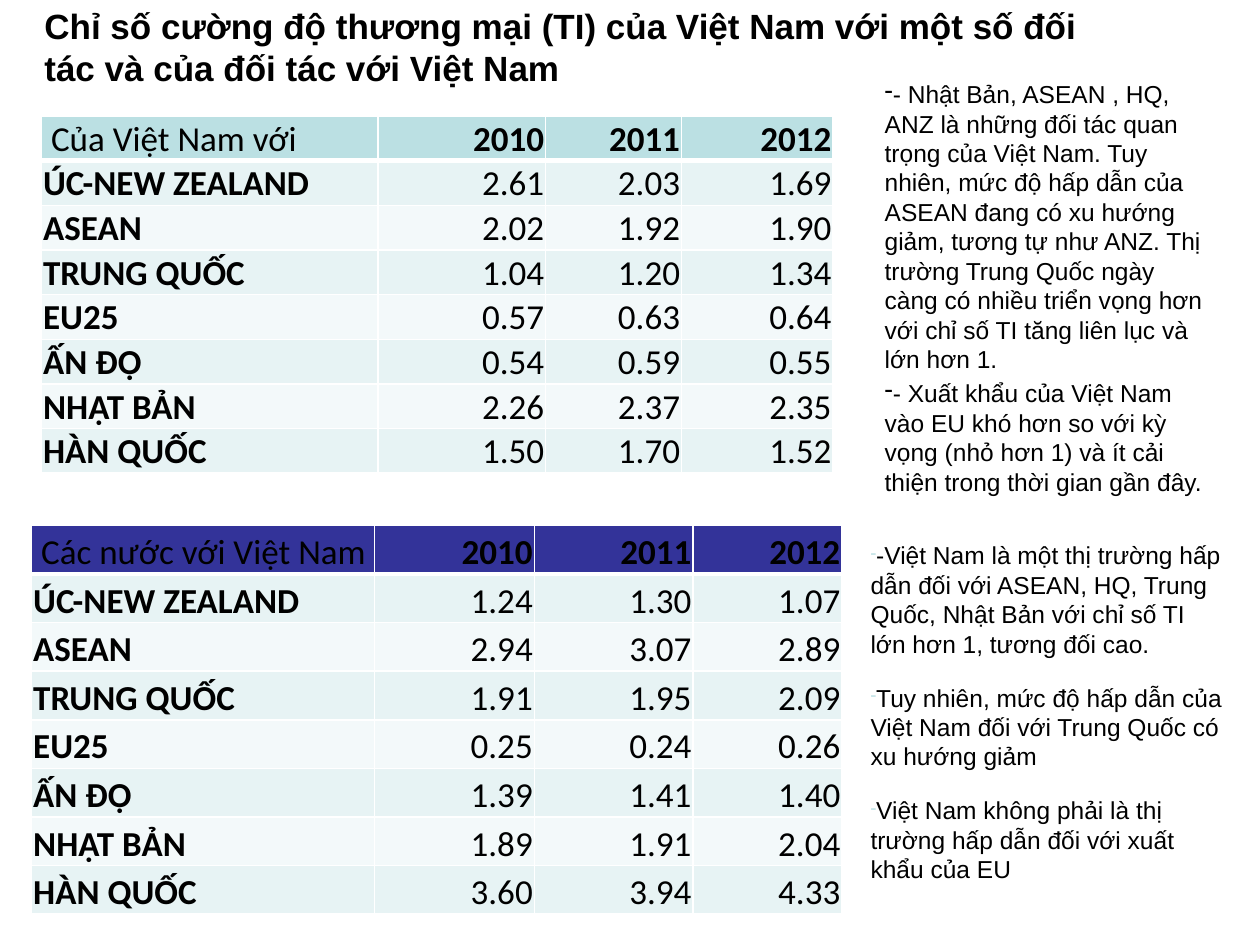
from lxml.etree import SubElement
from pptx import Presentation
from pptx.dml.color import RGBColor
from pptx.enum.text import MSO_ANCHOR, MSO_AUTO_SIZE, PP_ALIGN
from pptx.oxml.ns import qn
from pptx.util import Cm, Pt

TITLE = "Chỉ số cường độ thương mại (TI) của Việt Nam với một số đối tác và của đối tác với Việt Nam"
EXPORT_NOTES = [
    "- Nhật Bản, ASEAN , HQ, ANZ là những đối tác quan trọng của Việt Nam. "
    "Tuy nhiên, mức độ hấp dẫn của ASEAN đang có xu hướng giảm, tương tự như ANZ. "
    "Thị trường Trung Quốc ngày càng có nhiều triển vọng hơn với chỉ số TI "
    "tăng liên lục và lớn hơn 1.",
    "- Xuất khẩu của Việt Nam vào EU khó hơn so với kỳ vọng (nhỏ hơn 1) "
    "và ít cải thiện trong thời gian gần đây.",
]
IMPORT_NOTES = [
    "-Việt Nam là một thị trường hấp dẫn đối với ASEAN, HQ, Trung Quốc, "
    "Nhật Bản với chỉ số TI lớn hơn 1, tương đối cao.",
    "Tuy nhiên, mức độ hấp dẫn của Việt Nam đối với Trung Quốc có xu hướng giảm",
    "Việt Nam không phải là thị trường hấp dẫn đối với xuất khẩu của EU",
]
YEARS = ["2010", "2011", "2012"]
PARTNERS = ["ÚC-NEW ZEALAND", "ASEAN", "TRUNG QUỐC", "EU25", "ẤN ĐỘ", "NHẬT BẢN", "HÀN QUỐC"]
VIETNAM_TI = ["2.61 2.03 1.69", "2.02 1.92 1.90", "1.04 1.20 1.34", "0.57 0.63 0.64",
              "0.54 0.59 0.55", "2.26 2.37 2.35", "1.50 1.70 1.52"]
PARTNER_TI = ["1.24 1.30 1.07", "2.94 3.07 2.89", "1.91 1.95 2.09", "0.25 0.24 0.26",
              "1.39 1.41 1.40", "1.89 1.91 2.04", "3.60 3.94 4.33"]
BANDS = ["F3F9FA", "E7F3F4"]

TITLE_FONT = {"name": "Arial", "size": Pt(20), "bold": True}
NOTE_FONT = {"name": "Arial", "size": Pt(14), "bold": False}
CELL_FORMAT = {"vertical_anchor": MSO_ANCHOR.BOTTOM, "margin_left": Cm(0.03),
               "margin_right": Cm(0.03), "margin_top": Cm(0.03), "margin_bottom": 0}


def color(hex_value):
    return RGBColor.from_string(hex_value)


def apply(obj, values):
    for name, value in values.items():
        setattr(obj, name, value)


def place(sp, left, top, width, height):
    apply(sp, {"left": Cm(left), "top": Cm(top), "width": Cm(width), "height": Cm(height)})


def write(p, text, font):
    r = p.add_run()
    r.text = text
    apply(r.font, font)
    r.font.color.rgb = color("000000")


def add_dash(p, bullet_color=None, percent=None):
    pPr = p._p.get_or_add_pPr()
    pPr.set("marL", "0")
    pPr.set("indent", "0")
    if bullet_color:
        SubElement(SubElement(pPr, qn("a:buClr")), qn("a:srgbClr"), val=bullet_color)
    if percent:
        SubElement(pPr, qn("a:buSzPct"), val=str(percent * 1000))
    SubElement(pPr, qn("a:buFontTx"))
    SubElement(pPr, qn("a:buChar"), char="-")


def fill_notes(sp, notes, spacing, **bullet):
    tf = sp.text_frame
    apply(tf, {"word_wrap": True, "auto_size": MSO_AUTO_SIZE.NONE})
    for i, text in enumerate(notes):
        p = tf.add_paragraph() if i else tf.paragraphs[0]
        apply(p, spacing)
        add_dash(p, **bullet)
        write(p, text, NOTE_FONT)


def add_title(s):
    sp = s.shapes.title
    place(sp, 0.64, 0.64, 21.39, 1.27)
    tf = sp.text_frame
    apply(tf, {"vertical_anchor": MSO_ANCHOR.BOTTOM, "auto_size": MSO_AUTO_SIZE.NONE})
    p = tf.paragraphs[0]
    p.alignment = PP_ALIGN.LEFT
    write(p, TITLE, TITLE_FONT)


def set_borders(cell, bottom):
    tcPr = cell._tc.get_or_add_tcPr()
    for side, width in {"L": 1, "R": 1, "T": 1, "B": bottom}.items():
        ln = SubElement(tcPr, qn(f"a:ln{side}"), w=str(Pt(width)))
        SubElement(SubElement(ln, qn("a:solidFill")), qn("a:srgbClr"), val="FFFFFF")


def add_ti_table(s, heading, values, left, top, widths, row_height, header_fill):
    rows = [[heading, *YEARS]]
    rows += [[partner, *line.split()] for partner, line in zip(PARTNERS, values)]
    table = s.shapes.add_table(len(rows), len(widths), Cm(left), Cm(top),
                               Cm(sum(widths)), Cm(row_height * len(rows))).table
    for column, width in zip(table.columns, widths):
        column.width = Cm(width)
    for i, row in enumerate(rows):
        table.rows[i].height = Cm(row_height)
        for j, text in enumerate(row):
            cell = table.cell(i, j)
            apply(cell, CELL_FORMAT)
            set_borders(cell, 1 if i else 3)
            cell.fill.solid()
            cell.fill.fore_color.rgb = color(BANDS[i % 2] if i else header_fill)
            p = cell.text_frame.paragraphs[0]
            p.alignment = PP_ALIGN.RIGHT if j else PP_ALIGN.LEFT
            # Years and partner names are bold, heading and values are not
            write(p, text, {"name": "Calibri", "size": Pt(20), "bold": (i == 0) != (j == 0)})


def main():
    prs = Presentation()
    apply(prs, {"slide_width": Cm(25.4), "slide_height": Cm(19.05)})
    s = prs.slides.add_slide(prs.slide_layouts[1])

    # Title and comments on Vietnam's exports
    add_title(s)
    body = s.placeholders[1]
    place(body, 17.58, 1.47, 7.14, 8.46)
    fill_notes(body, EXPORT_NOTES, {})

    # Trade intensity in both directions
    add_ti_table(s, " Của Việt Nam với", VIETNAM_TI, 0.84, 2.34,
                 [6.78, 3.38, 2.74, 3.05], 0.9, "BBE0E3")
    add_ti_table(s, " Các nước với Việt Nam", PARTNER_TI, 0.64, 10.59,
                 [6.91, 3.22, 3.2, 3], 0.98, "333399")

    # Comments on the partners' exports
    box = s.shapes.add_textbox(Cm(17.3), Cm(10.77), Cm(7.59), Cm(7.77))
    fill_notes(box, IMPORT_NOTES, {"space_before": Pt(4), "space_after": Pt(10)},
               bullet_color="BBE0E3", percent=70)

    prs.save("out.pptx")


if __name__ == "__main__":
    main()
